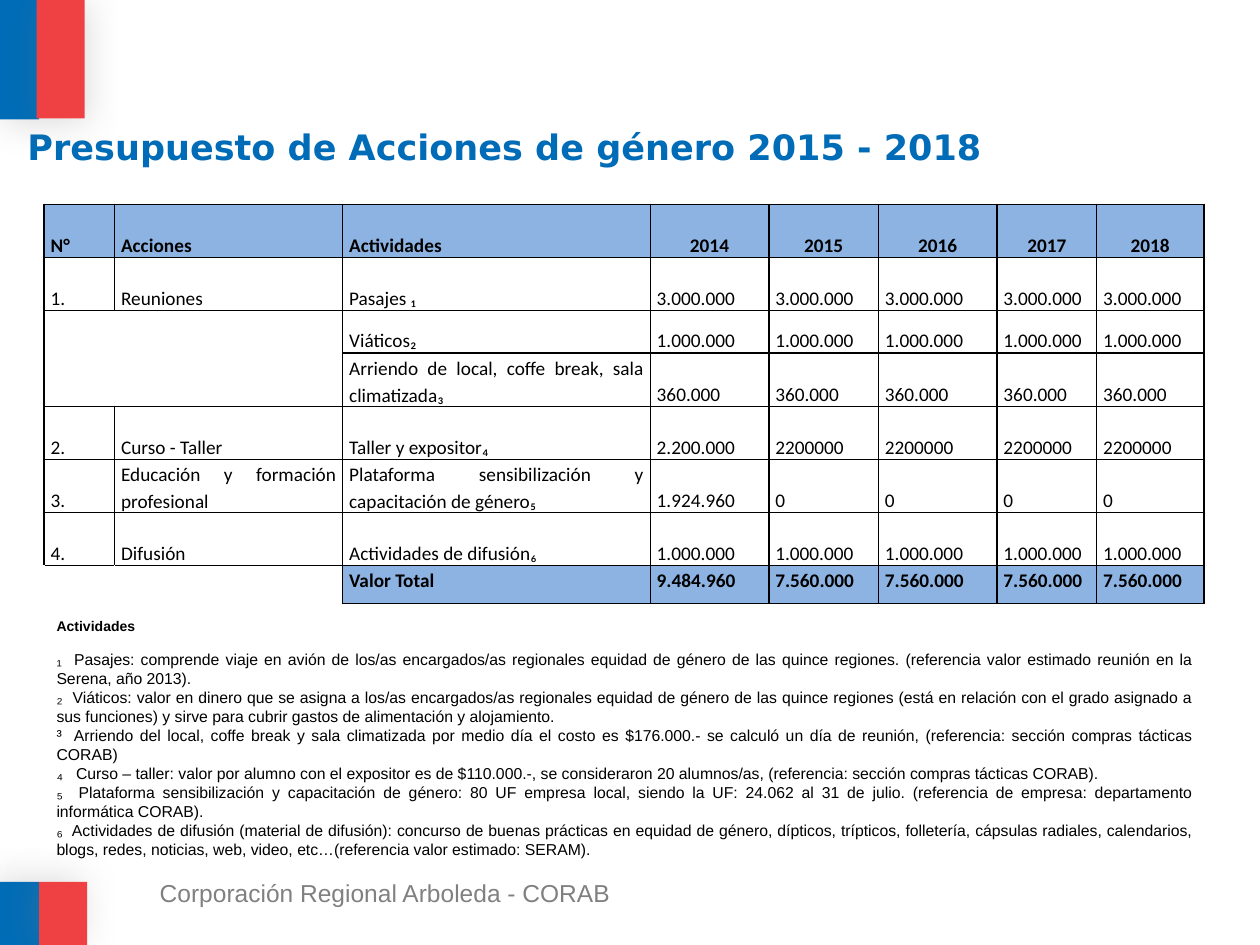
from lxml.etree import SubElement
from pptx import Presentation
from pptx.dml.color import RGBColor
from pptx.enum.shapes import MSO_SHAPE as Shape
from pptx.enum.text import MSO_ANCHOR as Anchor, MSO_AUTO_SIZE as AutoSize, PP_ALIGN as Align
from pptx.oxml import parse_xml
from pptx.oxml.ns import nsdecls, qn
from pptx.util import Cm, Pt

BLUE = RGBColor(0x00, 0x6C, 0xB7)
RED = RGBColor(0xEF, 0x41, 0x44)
HEADER_BLUE = RGBColor(0x8D, 0xB3, 0xE2)
GREY = RGBColor(0x80, 0x80, 0x80)
BLACK = RGBColor(0, 0, 0)

COLUMN_WIDTHS = (1.42, 4.6, 6.2, 2.39, 2.21, 2.39, 2.01, 2.16)
ROW_HEIGHTS = (1.07, 1.07, 0.86, 1.07, 1.07, 1.07, 1.07, 0.76)
YEARS = ["2014", "2015", "2016", "2017", "2018"]

# Number, action, activity, amount for 2014, amount for each later year
BUDGET = [
    ("1.", "Reuniones", "Pasajes ₁", "3.000.000", "3.000.000"),
    ("", "", "Viáticos₂", "1.000.000", "1.000.000"),
    ("", "", "Arriendo de local, coffe break, sala climatizada₃", "360.000", "360.000"),
    ("2.", "Curso - Taller", "Taller y expositor₄", "2.200.000", "2200000"),
    ("3.", "Educación y formación profesional",
     "Plataforma sensibilización y capacitación de género₅", "1.924.960", "0"),
    ("4.", "Difusión", "Actividades de difusión₆", "1.000.000", "1.000.000"),
    ("", "", "Valor Total", "9.484.960", "7.560.000"),
]

NOTES = [
    "₁  Pasajes: comprende viaje en avión de los/as encargados/as regionales equidad de género "
    "de las quince regiones. (referencia valor estimado reunión en la Serena, año 2013).",
    "₂  Viáticos: valor en dinero que se asigna a los/as encargados/as regionales equidad de "
    "género de las quince regiones (está en relación con el grado asignado a sus funciones) y "
    "sirve para cubrir gastos de alimentación y alojamiento.",
    "³  Arriendo del local, coffe break y sala climatizada por medio día el costo es $176.000.- "
    "se calculó un día de reunión, (referencia: sección compras tácticas CORAB)",
    "₄   Curso – taller: valor por alumno con el expositor es de $110.000.-, se consideraron 20 "
    "alumnos/as, (referencia: sección compras tácticas CORAB).",
    "₅  Plataforma sensibilización y capacitación de género: 80 UF empresa local, siendo la UF: "
    "24.062 al 31 de julio. (referencia de empresa: departamento informática CORAB).",
    "₆  Actividades de difusión (material de difusión): concurso de buenas prácticas en equidad "
    "de género, dípticos, trípticos, folletería, cápsulas radiales, calendarios, blogs, redes, "
    "noticias, web, video, etc…(referencia valor estimado: SERAM).",
]


def format_para(para, font, size, color, bold=False, align=Align.LEFT):
    para.alignment = align
    for span in para.runs:
        span.font.name = font
        span.font.size = Pt(size)
        span.font.color.rgb = color
        span.font.bold = bold


def add_block(page, left, top, width, height, color, shadow_angle):
    block = page.shapes.add_shape(Shape.RECTANGLE, Cm(left), Cm(top), Cm(width), Cm(height))
    block.fill.solid()
    block.fill.fore_color.rgb = color
    block.line.fill.background()
    block._element.spPr.append(parse_xml(
        f'<a:effectLst {nsdecls("a")}>'
        f'<a:outerShdw blurRad="{Pt(20)}" dist="{Pt(3)}" dir="{shadow_angle * 60000}" rotWithShape="0">'
        '<a:srgbClr val="808080"><a:alpha val="25000"/></a:srgbClr>'
        '</a:outerShdw></a:effectLst>'))


def add_text(page, left, top, width, height, lines):
    box = page.shapes.add_textbox(Cm(left), Cm(top), Cm(width), Cm(height))
    box.text_frame.word_wrap = True
    box.text_frame.text = "\n".join(lines)
    return box.text_frame.paragraphs


def set_title(page, text):
    title = page.shapes.title
    title.left, title.top, title.width, title.height = Cm(0.3), Cm(2.31), Cm(24.61), Cm(1.27)
    frame = title.text_frame
    frame.text = text
    frame.auto_size = AutoSize.NONE
    frame.vertical_anchor = Anchor.MIDDLE
    format_para(frame.paragraphs[0], "DejaVu Sans", 20, BLUE, bold=True)


def set_borders(cell, sides):
    properties = cell._tc.get_or_add_tcPr()
    for side in sides:
        line = SubElement(properties, qn(f"a:ln{side}"), w=str(Pt(1)))
        fill = SubElement(line, qn("a:solidFill"))
        SubElement(fill, qn("a:srgbClr"), val=str(BLACK))


def format_cell(cell, text, bold, shaded, align, anchor, sides):
    cell.text = text
    cell.margin_left = cell.margin_right = Cm(0.13)
    cell.margin_top = cell.margin_bottom = 0
    cell.vertical_anchor = anchor
    para = cell.text_frame.paragraphs[0]
    para.line_spacing = 1.15
    format_para(para, "Calibri", 11, BLACK, bold, align)
    set_borders(cell, sides)
    if shaded:
        cell.fill.solid()
        cell.fill.fore_color.rgb = HEADER_BLUE
    else:
        cell.fill.background()


def add_budget_table(page):
    rows = [["N°", "Acciones", "Actividades", *YEARS]]
    rows += [[*labels, first] + [later] * 4 for *labels, first, later in BUDGET]
    last = len(rows) - 1
    table = page.shapes.add_table(len(rows), len(COLUMN_WIDTHS), Cm(0.89), Cm(4.12),
                                  Cm(sum(COLUMN_WIDTHS)), Cm(sum(ROW_HEIGHTS))).table
    table.first_row = table.horz_banding = False
    for column, width in zip(table.columns, COLUMN_WIDTHS):
        column.width = Cm(width)
    for row, height in zip(table.rows, ROW_HEIGHTS):
        row.height = Cm(height)

    for r, texts in enumerate(rows):
        for c, text in enumerate(texts):
            emphasised = r == 0 or (r == last and c >= 2)
            if r == 0 and c >= 3:
                align = Align.CENTER
            elif 0 < r < last and (c == 2 or (c == 1 and r >= 5)):
                align = Align.JUSTIFY
            else:
                align = Align.LEFT
            # The total row is open under the first two columns
            sides = ("T", "RT")[c] if r == last and c < 2 else "LRTB"
            anchor = Anchor.TOP if r == last else Anchor.BOTTOM
            format_cell(table.cell(r, c), text, emphasised, emphasised, align, anchor, sides)
    table.cell(2, 0).merge(table.cell(3, 1))


def add_notes(page):
    heading, *notes = add_text(page, 0.89, 12.32, 23.39, 5.21, ["Actividades", *NOTES])
    format_para(heading, "Arial", 8, BLACK, bold=True, align=Align.JUSTIFY)
    heading.space_after = Pt(9)
    for para in notes:
        format_para(para, "Arial", 9, BLACK, align=Align.JUSTIFY)


def main():
    deck = Presentation()
    deck.slide_width, deck.slide_height = Cm(25.4), Cm(19.05)
    page = deck.slides.add_slide(deck.slide_layouts[5])

    # Coloured corner blocks
    add_block(page, 0, 0, 0.79, 2.41, BLUE, 45)
    add_block(page, 0.74, 0, 0.97, 2.39, RED, 45)
    add_block(page, 0, 17.78, 0.79, 1.27, BLUE, 215)
    add_block(page, 0.79, 17.78, 0.97, 1.27, RED, 215)

    # Footer
    footer = add_text(page, 2.97, 17.58, 20.32, 0.84, ["Corporación Regional Arboleda - CORAB"])
    format_para(footer[0], "Arial", 14, GREY)

    # Main content
    add_budget_table(page)
    set_title(page, "Presupuesto de Acciones de género 2015 - 2018")
    add_notes(page)
    deck.save("out.pptx")


if __name__ == "__main__":
    main()
